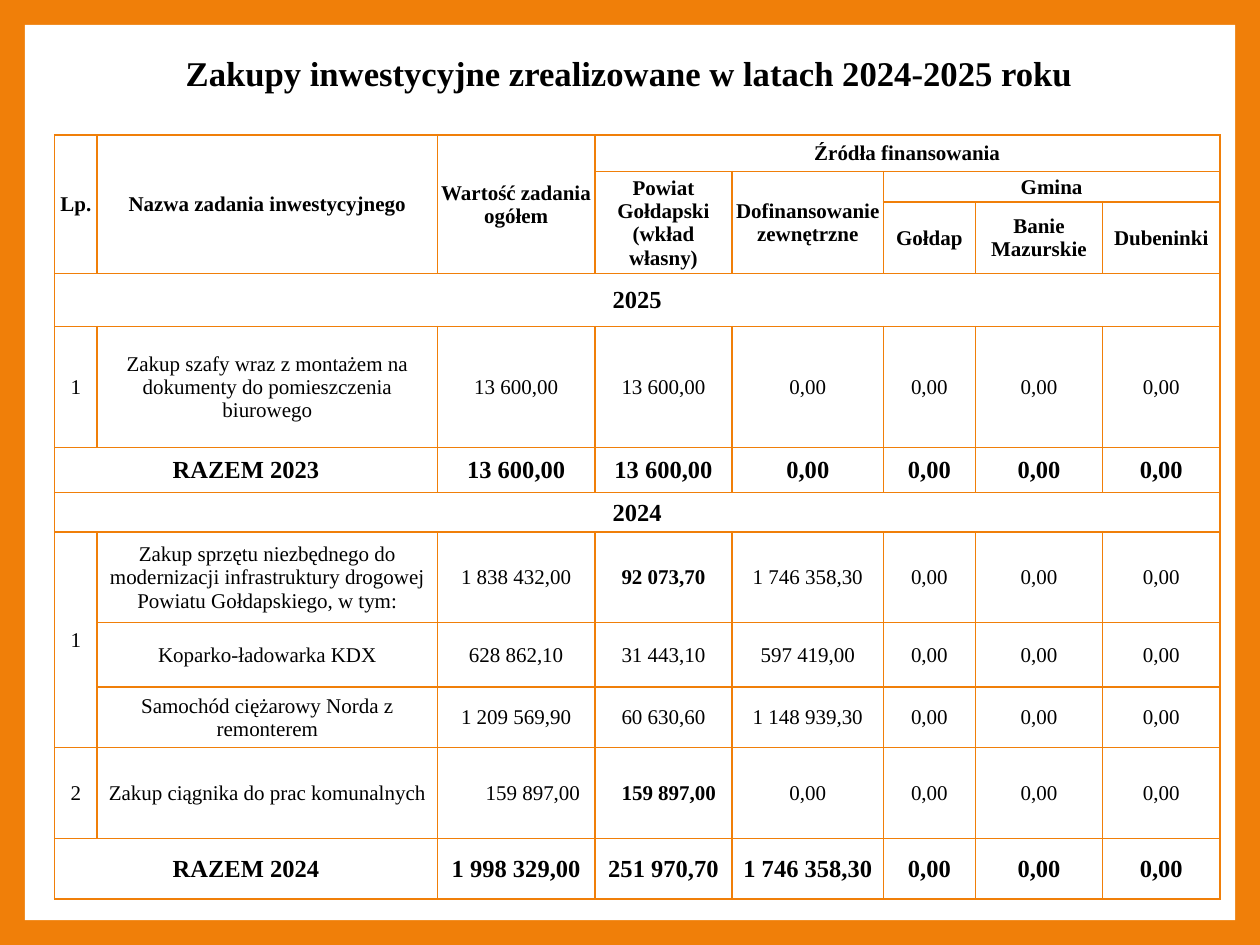
from lxml.etree import SubElement
from pptx import Presentation
from pptx.dml.color import RGBColor
from pptx.enum.shapes import MSO_SHAPE
from pptx.enum.text import MSO_ANCHOR, PP_ALIGN
from pptx.oxml.ns import qn
from pptx.util import Cm, Pt

ORANGE = RGBColor(0xF0, 0x7F, 0x09)
WHITE = RGBColor(0xFF, 0xFF, 0xFF)
BLACK = RGBColor(0x00, 0x00, 0x00)
FONT = "Times New Roman"


def write(paragraph, text, size, bold, align=PP_ALIGN.CENTER):
    paragraph.alignment = align
    run = paragraph.add_run()
    run.text = text
    font_format = {"name": FONT, "size": Pt(size), "bold": bold}
    for attribute, value in font_format.items():
        setattr(run.font, attribute, value)
    run.font.color.rgb = BLACK


def add_borders(cell):
    properties = cell._tc.get_or_add_tcPr()
    for side in ("a:lnL", "a:lnR", "a:lnT", "a:lnB"):
        line = SubElement(properties, qn(side), w=str(Pt(1)))
        fill = SubElement(line, qn("a:solidFill"))
        SubElement(fill, qn("a:srgbClr"), val=str(ORANGE))


prs = Presentation()
prs.slide_width, prs.slide_height = Cm(25.4), Cm(19.05)
slide = prs.slides.add_slide(prs.slide_layouts[6])

# Orange frame around a white page
slide.background.fill.solid()
slide.background.fill.fore_color.rgb = ORANGE
page = slide.shapes.add_shape(MSO_SHAPE.RECTANGLE, Cm(0.5), Cm(0.5), Cm(24.4), Cm(18.05))
page.shadow.inherit = False
page.fill.solid()
page.fill.fore_color.rgb = WHITE
page.line.fill.background()

# Title
title = slide.shapes.add_textbox(Cm(2.39), Cm(0.86), Cm(20.57), Cm(1.22)).text_frame
title.word_wrap = True
title.vertical_anchor = MSO_ANCHOR.MIDDLE
write(title.paragraphs[0], "Zakupy inwestycyjne zrealizowane w latach 2024-2025 roku", 19.8, True)

# Table content; None marks a cell covered by a merge
ZEROS = ["0,00"] * 3
rows = [
    ["Lp.", "Nazwa zadania inwestycyjnego", "Wartość zadania ogółem",
     "Źródła finansowania", None, None, None, None],
    [None, None, None, "Powiat Gołdapski (wkład własny)",
     "Dofinansowanie zewnętrzne", "Gmina", None, None],
    [None, None, None, None, None, "Gołdap", "Banie Mazurskie", "Dubeninki"],
    ["2025"] + [None] * 7,
    ["1", "Zakup szafy wraz z montażem na dokumenty do pomieszczenia biurowego",
     "13 600,00", "13 600,00", "0,00", *ZEROS],
    ["RAZEM 2023", None, "13 600,00", "13 600,00", "0,00", *ZEROS],
    ["2024"] + [None] * 7,
    ["1", "Zakup sprzętu niezbędnego do modernizacji infrastruktury drogowej "
     "Powiatu Gołdapskiego, w tym:", "1 838 432,00", "92 073,70", "1 746 358,30", *ZEROS],
    [None, "Koparko-ładowarka KDX", "628 862,10", "31 443,10", "597 419,00", *ZEROS],
    [None, "Samochód ciężarowy Norda z remonterem",
     "1 209 569,90", "60 630,60", "1 148 939,30", *ZEROS],
    ["2", "Zakup ciągnika do prac komunalnych", "159 897,00", "159 897,00", "0,00", *ZEROS],
    ["RAZEM 2024", None, "1 998 329,00", "251 970,70", "1 746 358,30", *ZEROS],
]
col_widths = [0.86, 6.86, 3.17, 2.77, 3.05, 1.85, 2.57, 2.36]
row_heights = [0.74, 0.61, 1.27, 1.07, 2.44, 0.91, 0.79, 1.83, 1.3, 1.22, 1.83, 1.22]
merges = [  # first row, first column, last row, last column
    (0, 0, 2, 0), (0, 1, 2, 1), (0, 2, 2, 2), (0, 3, 0, 7),
    (1, 3, 2, 3), (1, 4, 2, 4), (1, 5, 1, 7),
    (3, 0, 3, 7), (5, 0, 5, 1), (6, 0, 6, 7), (7, 0, 9, 0), (11, 0, 11, 1),
]
HEADER_ROWS = {0, 1, 2}
YEAR_AND_TOTAL_ROWS = {3, 5, 6, 11}
BOLD_AMOUNTS = {(7, 3), (10, 3)}
LEFT_INDENTS = {(10, 2): 0.97, (10, 3): 0.54}

# Table grid
purchases = slide.shapes.add_table(
    len(rows), len(col_widths), Cm(1.1), Cm(2.72),
    Cm(sum(col_widths)), Cm(sum(row_heights))).table
purchases.first_row = False
purchases.horz_banding = False
for column, width in zip(purchases.columns, col_widths):
    column.width = Cm(width)
for row, height in zip(purchases.rows, row_heights):
    row.height = Cm(height)
for top, left, bottom, right in merges:
    purchases.cell(top, left).merge(purchases.cell(bottom, right))

# Table cells
for r, texts in enumerate(rows):
    for c, text in enumerate(texts):
        cell = purchases.cell(r, c)
        add_borders(cell)
        cell.fill.background()
        cell_format = {
            "vertical_anchor": MSO_ANCHOR.MIDDLE,
            "margin_left": Cm(LEFT_INDENTS.get((r, c), 0.02)),
            "margin_right": Cm(0.02),
            "margin_top": Cm(0.02),
            "margin_bottom": Cm(0),
        }
        for attribute, value in cell_format.items():
            setattr(cell, attribute, value)
        if text is None:
            continue
        size = 14 if r in YEAR_AND_TOTAL_ROWS else 12
        bold = r in HEADER_ROWS | YEAR_AND_TOTAL_ROWS or (r, c) in BOLD_AMOUNTS
        align = PP_ALIGN.LEFT if (r, c) in LEFT_INDENTS else PP_ALIGN.CENTER
        write(cell.text_frame.paragraphs[0], text, size, bold, align)

prs.save("out.pptx")
